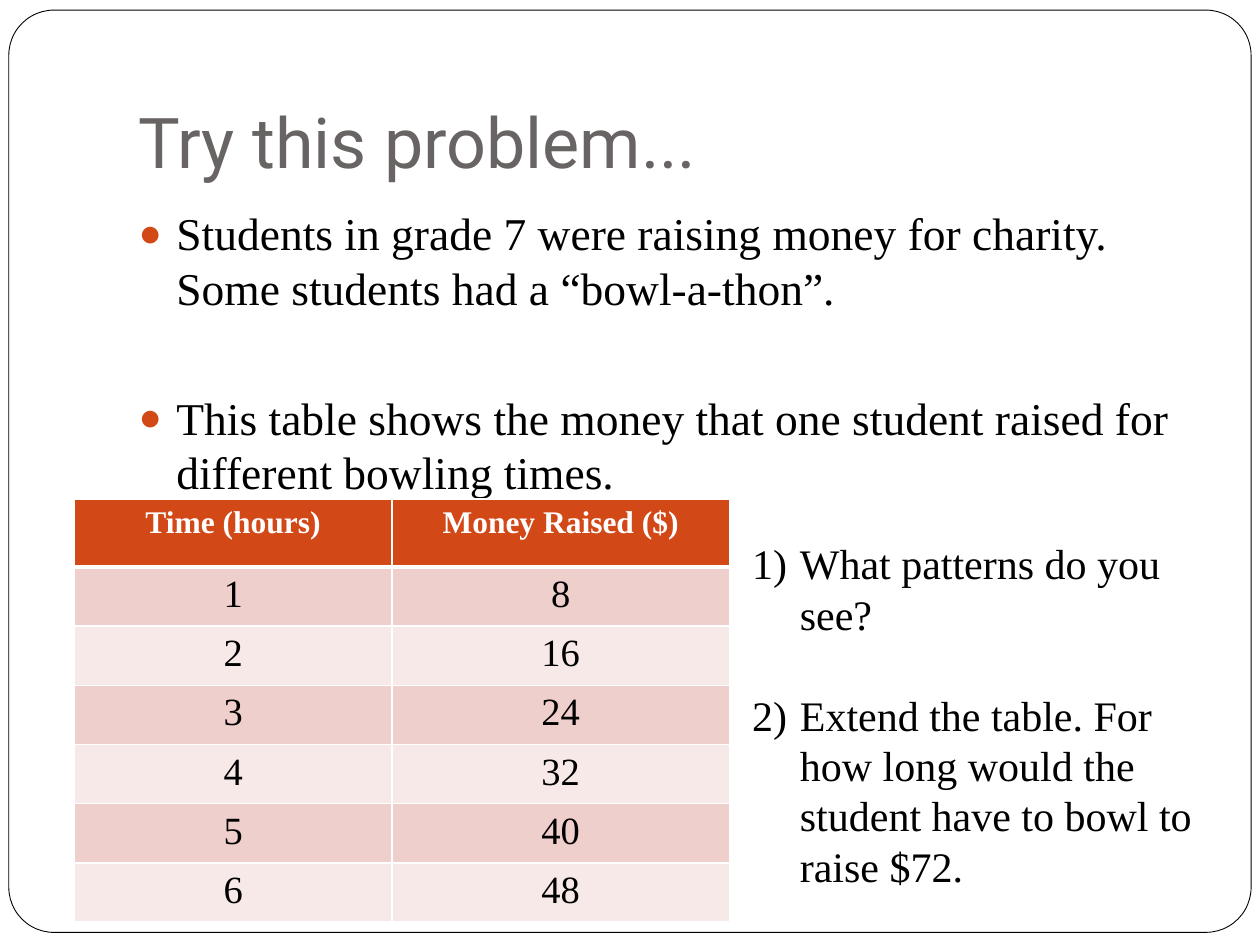
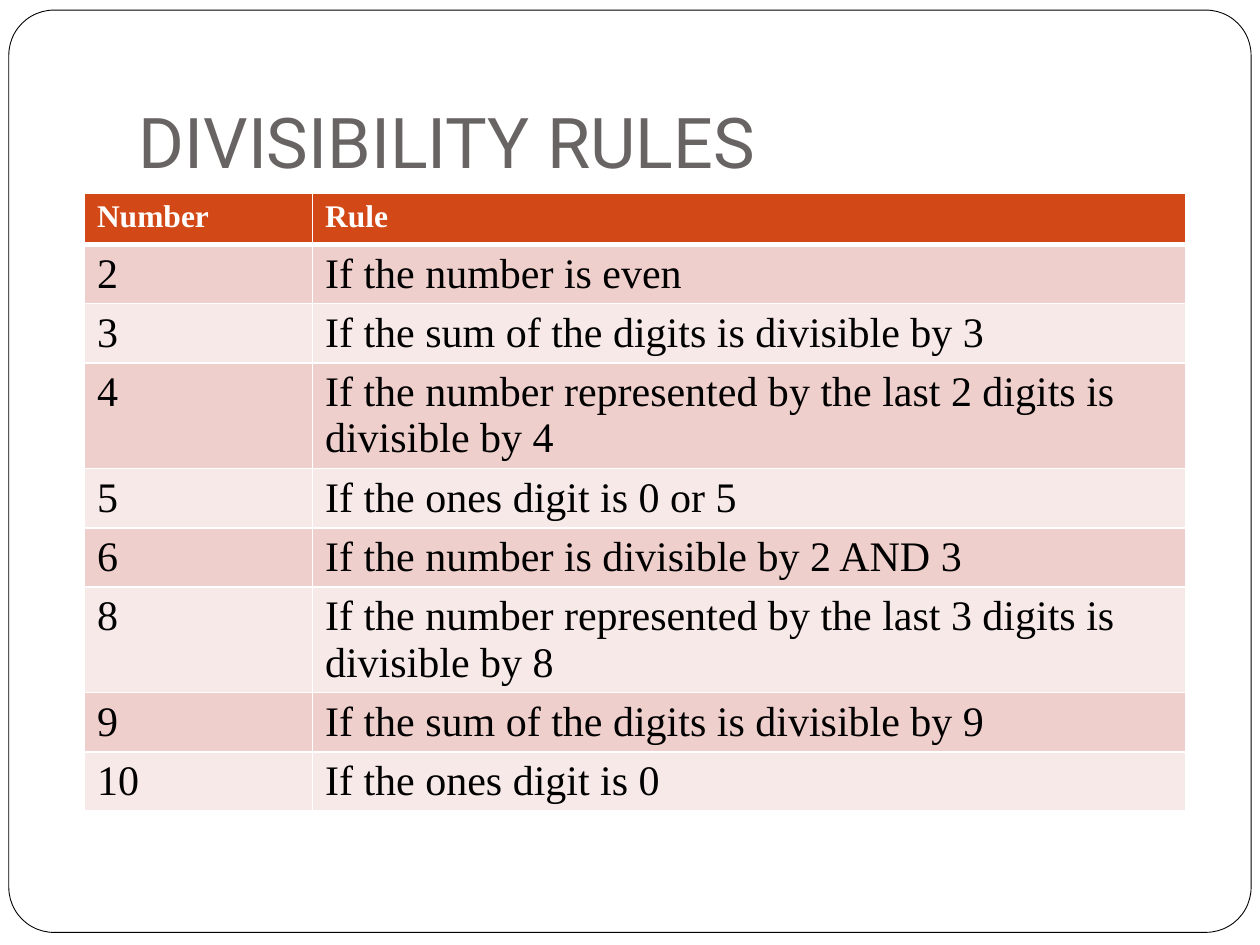
from lxml.etree import SubElement
from pptx import Presentation
from pptx.dml.color import RGBColor
from pptx.enum.shapes import MSO_SHAPE
from pptx.enum.text import MSO_ANCHOR, MSO_AUTO_SIZE, PP_ALIGN
from pptx.oxml import parse_xml
from pptx.oxml.ns import nsdecls, qn
from pptx.util import Inches, Pt

WHITE = RGBColor(0xFF, 0xFF, 0xFF)
BLACK = RGBColor(0, 0, 0)
GREY = RGBColor(0x69, 0x64, 0x64)
RUST = RGBColor(0xD3, 0x48, 0x17)
ROSE = RGBColor(0xEF, 0xCF, 0xCC)
BLUSH = RGBColor(0xF7, 0xE9, 0xE8)
SERIF = "Times New Roman"


def add_list(frame, lines, size, indent, gap, marks):
    frame.word_wrap = True
    frame.auto_size = MSO_AUTO_SIZE.NONE
    for i, line in enumerate(lines):
        para = frame.paragraphs[0] if i == 0 else frame.add_paragraph()
        para.text = line
        para.line_spacing = 1.0
        para.space_before = Pt(gap if i else 0)
        props = para._p.get_or_add_pPr()
        props.set("marL", str(Inches(indent)))
        props.set("indent", str(-Inches(indent)))
        for mark in marks:
            props.append(parse_xml(mark))
        para.font.name = SERIF
        para.font.size = Pt(size)
        para.font.color.rgb = BLACK


def add_grid(slide, rows, left, top, widths, heights, size, align):
    table = slide.shapes.add_table(
        len(rows), len(widths), Inches(left), Inches(top),
        Inches(sum(widths)), Inches(sum(heights))).table
    for col, width in zip(table.columns, widths):
        col.width = Inches(width)
    for r, row in enumerate(rows):
        table.rows[r].height = Inches(heights[r])
        for c, text in enumerate(row):
            cell = table.cell(r, c)
            cell.text = text
            cell.fill.solid()
            cell.fill.fore_color.rgb = RUST if r == 0 else ROSE if r % 2 else BLUSH
            para = cell.text_frame.paragraphs[0]
            para.alignment = align
            para.font.name = SERIF
            para.font.size = Pt(size if r else 18)
            para.font.bold = r == 0
            para.font.color.rgb = BLACK if r else WHITE
            props = cell._tc.get_or_add_tcPr()
            for i, side in enumerate(("lnL", "lnR", "lnT", "lnB")):
                thick = (r, side) in ((0, "lnB"), (1, "lnT"))
                edge = SubElement(props, qn("a:" + side), w=str(Pt(3 if thick else 1)))
                fill = SubElement(edge, qn("a:solidFill"))
                SubElement(fill, qn("a:srgbClr"), val=str(WHITE))
                props.insert(i, edge)


deck = Presentation()
deck.slide_width = Inches(10)
deck.slide_height = Inches(7.5)

slides = []
for title, kind in (("Try this problem...", 1), ("DIVISIBILITY RULES", 5)):
    slide = deck.slides.add_slide(deck.slide_layouts[kind])
    slides.append(slide)
    head = slide.shapes.title
    head.left, head.top = Inches(1), Inches(0.3)
    head.width, head.height = Inches(8.5), Inches(1.25)
    frame = head.text_frame
    frame.text = title
    frame.auto_size = MSO_AUTO_SIZE.NONE
    frame.vertical_anchor = MSO_ANCHOR.BOTTOM
    frame.margin_bottom = Inches(0.1)
    para = frame.paragraphs[0]
    para.alignment = PP_ALIGN.LEFT
    para.font.name = "Roboto"
    para.font.size = Pt(40)
    para.font.color.rgb = GREY
first, second = slides

border = first.shapes.add_shape(
    MSO_SHAPE.ROUNDED_RECTANGLE, Inches(0.07), Inches(0.08), Inches(9.86), Inches(7.32))
border.adjustments[0] = 0.049
border.shadow.inherit = False
border.fill.solid()
border.fill.fore_color.rgb = WHITE
border.line.color.rgb = BLACK
border.line.width = Pt(0.5)
deck.slide_master.shapes.element.insert(2, border.element)

body = first.placeholders[1]
body.left, body.top = Inches(1), Inches(1.58)
body.width, body.height = Inches(8.5), Inches(5)
dots = (
    f'<a:buClr {nsdecls("a")}><a:srgbClr val="{RUST}"/></a:buClr>',
    f'<a:buSzPct {nsdecls("a")} val="85000"/>',
    f'<a:buChar {nsdecls("a")} char="●"/>',
)
add_list(body.text_frame, (
    "Students in grade 7 were raising money for charity.  Some students had a “bowl-a-thon”.",
    "This table shows the money that one student raised for different bowling times.",
), 26, 0.3, 43, dots)

hours = [("Time (hours)", "Money Raised ($)")]
hours += [(str(n), str(8 * n)) for n in range(1, 7)]
add_grid(first, hours, 0.59, 3.96, (2.52, 2.68), [0.54] + [0.47] * 6, 22, PP_ALIGN.CENTER)

tasks = first.shapes.add_textbox(Inches(5.87), Inches(4.22), Inches(3.78), Inches(2.12))
numbers = (f'<a:buAutoNum {nsdecls("a")} type="arabicParenR"/>',)
add_list(tasks.text_frame, (
    "What patterns do you see?",
    "Extend the table. For how long would the student have to bowl to raise $72.",
), 24, 0.38, 28.8, numbers)

rules = (
    ("Number", "Rule"),
    ("2", "If the number is even"),
    ("3", "If the sum of the digits is divisible by 3"),
    ("4", "If the number represented by the last 2 digits is divisible by 4"),
    ("5", "If the ones digit is 0 or 5"),
    ("6", "If the number is divisible by 2 AND 3"),
    ("8", "If the number represented by the last 3 digits is divisible by 8"),
    ("9", "If the sum of the digits is divisible by 9"),
    ("10", "If the ones digit is 0"),
)
heights = [0.41] + [0.84 if len(rule) > 50 else 0.47 for _, rule in rules[1:]]
add_grid(second, rules, 0.67, 1.53, (1.81, 6.93), heights, 24, PP_ALIGN.LEFT)

deck.save("out.pptx")
